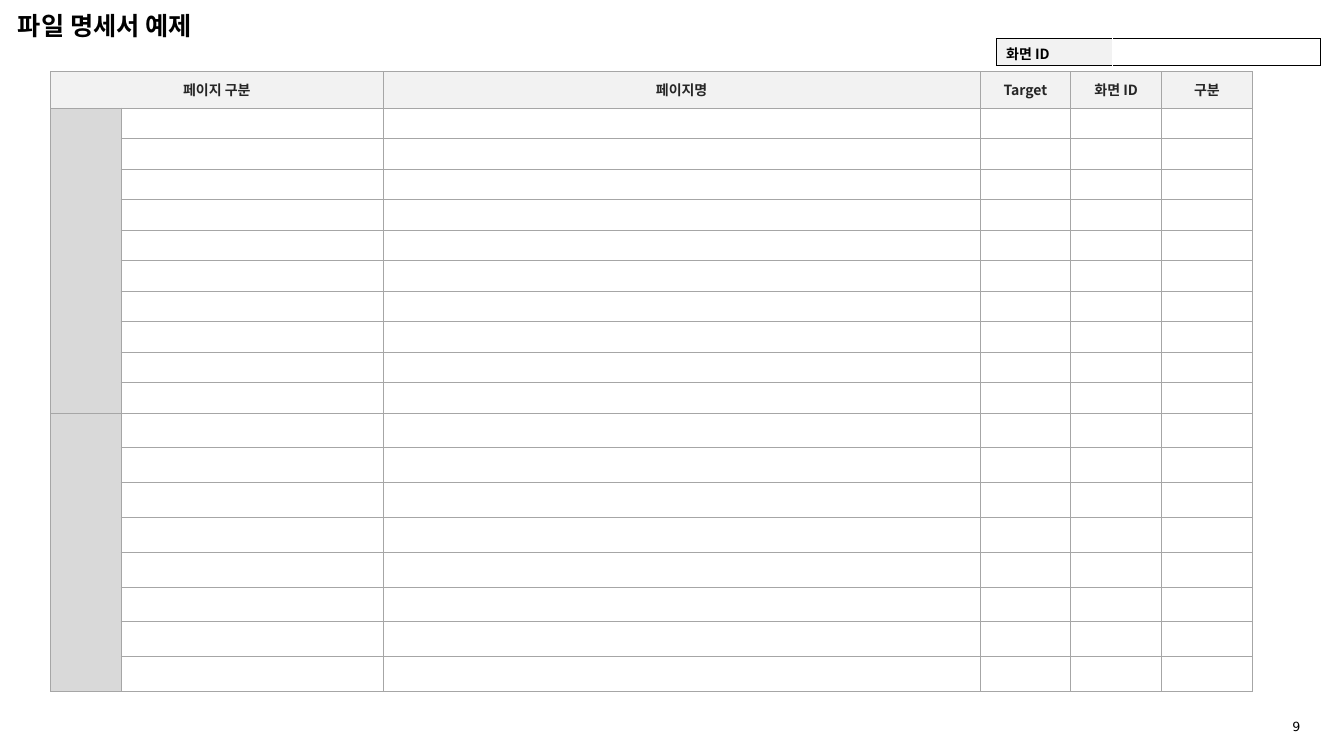
from lxml import etree
from pptx import Presentation
from pptx.dml.color import RGBColor
from pptx.enum.text import MSO_ANCHOR, PP_ALIGN
from pptx.oxml.ns import qn
from pptx.util import Inches, Pt

LEFT, CENTER = PP_ALIGN.LEFT, PP_ALIGN.CENTER
TOP, MIDDLE = MSO_ANCHOR.TOP, MSO_ANCHOR.MIDDLE

KOREAN_FONT = "Noto Sans CJK KR"
NUMBER_FONT = "DejaVu Sans"
BLACK, DARK, WHITE = "000000", "262626", "FFFFFF"
LIGHT_GRAY, GROUP_GRAY, GRID_GRAY = "F2F2F2", "D9D9D9", "A6A6A6"


def rgb(value):
    return RGBColor.from_string(value)


def write(frame, text, size=10, font=KOREAN_FONT, color=BLACK, bold=True, align=LEFT):
    paragraph = frame.paragraphs[0]
    paragraph.alignment = align
    run = paragraph.add_run()
    run.text = text
    run.font.size = Pt(size)
    run.font.name = font
    run.font.bold = bold
    run.font.color.rgb = rgb(color)
    east_asian = etree.SubElement(run.font._element, qn("a:ea"))
    east_asian.set("typeface", font)


class SpecSheet:
    """Holds the table style and the current slide."""

    empty_cell_size = 8

    def __init__(self, slide):
        self.slide = slide

    def text(self, content, left, top, width, height, wrap=True, **style):
        box = self.slide.shapes.add_textbox(
            Inches(left), Inches(top), Inches(width), Inches(height))
        box.text_frame.word_wrap = wrap
        write(box.text_frame, content, **style)

    def table(self, left, top, widths, heights):
        grid = self.slide.shapes.add_table(
            len(heights), len(widths), Inches(left), Inches(top),
            Inches(sum(widths)), Inches(sum(heights))).table
        grid.first_row = grid.horz_banding = False
        for column, width in zip(grid.columns, widths):
            column.width = Inches(width)
        for row, height in zip(grid.rows, heights):
            row.height = Inches(height)
        return grid

    def cell(self, cell, fill, borders, line_width, text="", anchor=MIDDLE, **style):
        cell.fill.solid()
        cell.fill.fore_color.rgb = rgb(fill)
        cell.vertical_anchor = anchor
        self.borders(cell, borders, line_width)
        if text:
            write(cell.text_frame, text, **style)
        else:
            # Small end mark keeps an empty row at its set height
            end = etree.SubElement(cell.text_frame.paragraphs[0]._p, qn("a:endParaRPr"))
            end.set("sz", str(self.empty_cell_size * 100))

    def borders(self, cell, colors, line_width):
        """Colors run left, right, top, bottom."""
        properties = cell._tc.get_or_add_tcPr()
        for index, (side, color) in enumerate(zip("LRTB", colors)):
            line = etree.Element(qn(f"a:ln{side}"), w=str(Pt(line_width)))
            solid = etree.SubElement(line, qn("a:solidFill"))
            etree.SubElement(solid, qn("a:srgbClr"), val=color)
            properties.insert(index, line)


def main():
    deck = Presentation()
    deck.slide_width, deck.slide_height = Inches(13.33), Inches(7.5)
    sheet = SpecSheet(deck.slides.add_slide(deck.slide_layouts[6]))

    # Page number
    sheet.text("9", 12.72, 7.08, 0.4, 0.24, wrap=False,
               size=9, font=NUMBER_FONT, bold=False)

    # File list: a header row and two groups of empty rows
    header_height = 0.36
    groups = [(10, 3.03), (8, 2.76)]
    heights = [header_height]
    for count, height in groups:
        heights += [height / count] * count
    file_list = sheet.table(0.5, 0.71, [0.7, 2.6, 5.92, 0.9, 0.9, 0.9], heights)

    headings = ["페이지 구분", "", "페이지명", "Target", "화면 ID", "구분"]
    grid_lines = [GRID_GRAY] * 4
    for row in range(len(heights)):
        for column, heading in enumerate(headings):
            if row == 0:
                fill, text = LIGHT_GRAY, heading
            else:
                fill, text = (WHITE if column else GROUP_GRAY), ""
            sheet.cell(file_list.cell(row, column), fill, grid_lines, 0.5,
                       text, color=DARK, align=CENTER)

    file_list.cell(0, 0).merge(file_list.cell(0, 1))
    first = 1
    for count, _ in groups:
        file_list.cell(first, 0).merge(file_list.cell(first + count - 1, 0))
        first += count

    # Title
    sheet.text("파일 명세서 예제", 0.08, 0.05, 4.27, 0.4, size=18)

    # Screen ID box
    screen_id = sheet.table(9.88, 0.38, [1.15, 2.06], [0.27])
    label, value = screen_id.cell(0, 0), screen_id.cell(0, 1)
    label.margin_bottom = value.margin_bottom = Inches(0.02)
    sheet.cell(label, LIGHT_GRAY, [BLACK, WHITE, BLACK, BLACK], 0.25,
               "화면 ID", anchor=TOP)
    sheet.cell(value, WHITE, [WHITE, BLACK, BLACK, BLACK], 0.25)

    deck.save("out.pptx")


if __name__ == "__main__":
    main()
